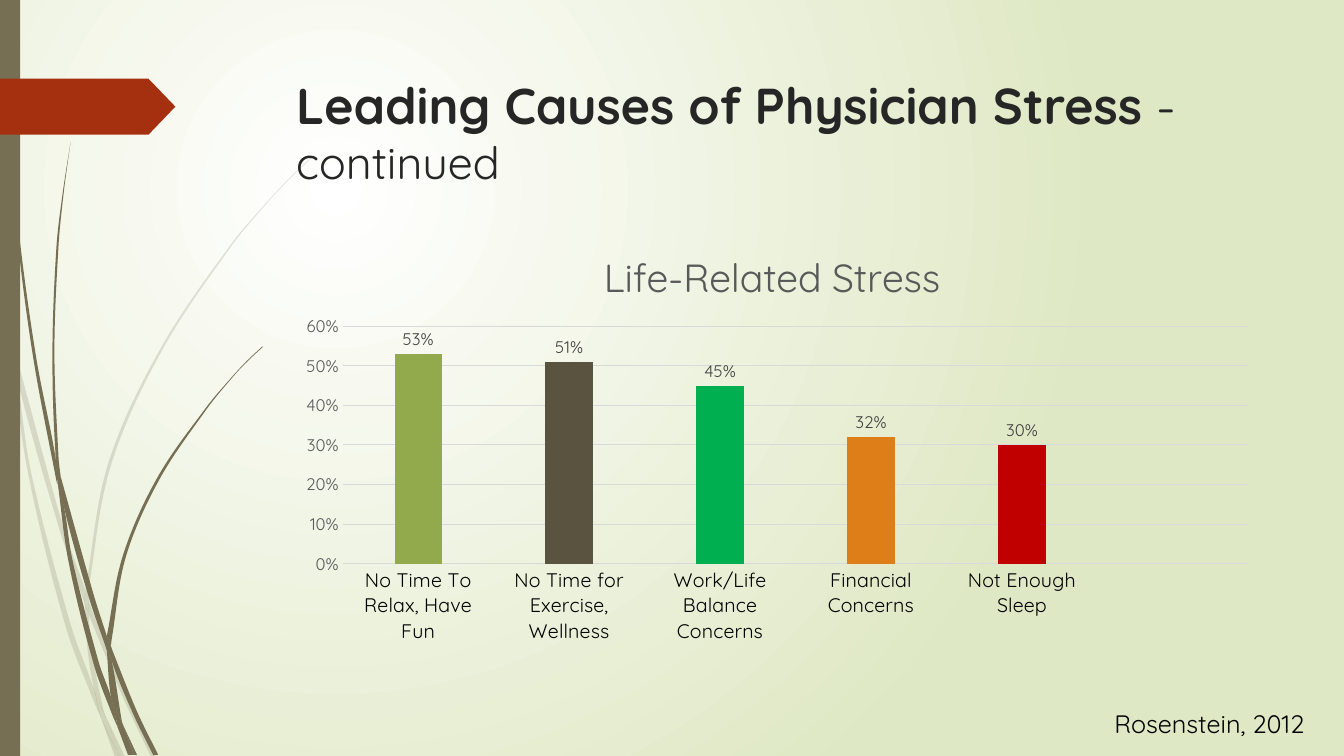
"""Build a slide with a column chart of life-related causes of physician stress."""
import math

import pptx
import pptx.chart.data
import pptx.dml.color
import pptx.enum.chart
import pptx.enum.shapes
import pptx.enum.text
import pptx.oxml.ns
import pptx.util
from lxml import etree

Pt = pptx.util.Pt
RGBColor = pptx.dml.color.RGBColor
qn = pptx.oxml.ns.qn

FONT = "Quicksand"
WHITE = RGBColor(0xFF, 0xFF, 0xFF)
PALE_GREEN = RGBColor(0xDF, 0xE8, 0xC4)
OLIVE = RGBColor(0x76, 0x6F, 0x54)
RUST = RGBColor(0xA5, 0x30, 0x10)
INK = RGBColor(0x26, 0x26, 0x26)
BLACK = RGBColor(0, 0, 0)
LABEL_GRAY = RGBColor(0x40, 0x40, 0x40)
AXIS_GRAY = RGBColor(0x59, 0x59, 0x59)
GRID_GRAY = RGBColor(0xD9, 0xD9, 0xD9)

CAUSES = [
    ("No Time To Relax, Have Fun", 0.53, RGBColor(0x92, 0xAA, 0x4C)),
    ("No Time for Exercise, Wellness", 0.51, RGBColor(0x59, 0x53, 0x3F)),
    ("Work/Life Balance Concerns", 0.45, RGBColor(0x00, 0xB0, 0x50)),
    ("Financial Concerns", 0.32, RGBColor(0xDE, 0x7E, 0x18)),
    ("Not Enough Sleep", 0.3, RGBColor(0xC0, 0x00, 0x00)),
]

GRASS_UNIT = 0.72
PALE_BLADES = [
    ([(0, 282), (9, 322), (11, 350)], [(11, 350), (10, 344), (0, 299)]),
    ([(14, 345), (62, 520), (85, 586)], [(84, 599), (58, 522), (17, 376), (14, 345)]),
    ([(88, 596), (92, 607), (127, 692), (155, 751)], [(150, 751), (123, 694), (88, 610)]),
    ([(105, 711), (124, 751)], [(119, 751), (105, 711)]),
    ([(11, 350), (17, 376), (31, 469), (70, 619), (93, 683), (99, 707), (101, 714)],
     [(101, 714), (92, 693), (65, 621), (28, 470), (11, 350)]),
    ([(84, 599), (88, 608), (88, 610), (91, 646), (103, 706), (105, 711)],
     [(105, 711), (96, 692), (93, 683), (87, 646), (84, 599)]),
    ([(312, 154), (290, 175), (268, 198), (229, 245), (160, 349), (110, 462), (88, 584),
      (88, 596)], [(85, 586), (85, 584), (107, 461), (158, 348), (228, 244), (268, 197),
                   (289, 175), (312, 153)]),
    ([(101, 714), (119, 751)], [(114, 751), (101, 714)]),
    ([(85, 586), (88, 596), (88, 610)], [(88, 608), (84, 599), (85, 586)]),
    ([(93, 683), (96, 692), (105, 711), (119, 751)], [(119, 751), (101, 714), (93, 683)]),
]
DARK_BLADES = [
    ([(4, 0), (4, 48), (8, 109), (19, 232), (36, 355), (55, 453), (57, 481)],
     [(57, 481), (56, 477), (33, 355), (17, 233), (7, 110), (4, 48), (3, 0)]),
    ([(60, 472), (93, 590), (106, 631)], [(106, 645), (88, 592), (64, 505), (60, 472)]),
    ([(110, 641), (113, 649), (136, 706), (157, 749)],
     [(152, 749), (132, 708), (111, 656), (110, 641)]),
    ([(57, 477), (64, 505), (72, 556), (98, 657), (110, 691), (116, 717), (117, 722)],
     [(117, 722), (111, 708), (93, 659), (68, 557), (57, 477)]),
    ([(70, 141), (63, 193), (58, 245), (54, 349), (58, 453), (60, 472)],
     [(60, 472), (55, 449), (52, 349), (56, 245), (62, 193), (70, 141)]),
    ([(122, 719), (136, 749)], [(133, 749), (122, 719)]),
    ([(55, 449), (60, 472), (64, 505)], [(64, 505), (57, 477), (55, 449)]),
    ([(261, 344), (245, 359), (231, 374), (205, 406), (158, 476), (125, 552), (111, 633),
      (110, 641)], [(106, 631), (122, 551), (156, 474), (204, 405), (231, 373), (245, 358),
                    (260, 344)]),
    ([(117, 722), (131, 749)], [(127, 749), (117, 722)]),
    ([(106, 645), (111, 656), (121, 716), (122, 719)],
     [(122, 719), (116, 706), (110, 691), (106, 645)]),
    ([(106, 631), (110, 641), (111, 656)], [(109, 651), (106, 645), (106, 631)]),
    ([(110, 691), (116, 706), (122, 719), (133, 749)],
     [(130, 749), (117, 722), (116, 717), (110, 691)]),
]


def style_font(font, size, color, bold=False):
    """Set the common typeface with a size, colour and weight."""
    font.name, font.size, font.bold = FONT, Pt(size), bold
    font.color.rgb = color


def paint(shape, color):
    """Give a shape a plain fill without line or shadow."""
    shape.shadow.inherit = False
    shape.fill.solid()
    shape.fill.fore_color.rgb = color
    shape.line.fill.background()


def paint_background(slide):
    """Fill the background with a round gradient from white to pale green."""
    fill = slide.background.fill
    fill.gradient()
    for stop, color in zip(fill.gradient_stops, (WHITE, PALE_GREEN)):
        stop.color.rgb = color
    gradient = slide.element.find(".//" + qn("a:gradFill"))
    gradient.remove(gradient.find(qn("a:lin")))
    circle = etree.SubElement(gradient, qn("a:path"), path="circle")
    etree.SubElement(circle, qn("a:fillToRect"), l="50000", t="50000", r="100000", b="100000")


def curve_points(knots):
    """Return two handles and an end point for each smooth segment between knots."""
    around = [knots[0], *knots, knots[-1]]
    points = []
    for before, start, end, after in zip(around, around[1:], around[2:], around[3:]):
        reach = math.dist(start, end) / 3
        for anchor, first, last, sign in ((start, before, end, 1), (end, start, after, -1)):
            scale = sign * reach / math.dist(first, last)
            points.append(tuple(a + scale * (q - p) for a, p, q in zip(anchor, first, last)))
        points.append(end)
    return points


def add_blade(slide, left, top, edges, alpha):
    """Draw one piece of grass between its two edges."""
    down, back = edges
    points = [down[0]] + curve_points(down)
    if down[-1] != back[0]:
        points += curve_points([down[-1], back[0]])
    points += curve_points(back)
    outline = [(Pt(left + GRASS_UNIT * x), Pt(top + GRASS_UNIT * y)) for x, y in points]
    builder = slide.shapes.build_freeform(*outline[0])
    builder.add_line_segments(outline[1:], close=False)
    blade = builder.convert_to_shape()
    segments = list(blade.element.iter(qn("a:lnTo")))
    for index in range(0, len(segments), 3):
        curve = etree.Element(qn("a:cubicBezTo"))
        segments[index].addprevious(curve)
        for segment in segments[index:index + 3]:
            curve.append(segment[0])
            segment.getparent().remove(segment)
    etree.SubElement(curve.getparent(), qn("a:close"))
    paint(blade, OLIVE)
    if alpha < 100:
        color = blade.element.spPr.find(qn("a:solidFill"))[0]
        etree.SubElement(color, qn("a:alpha"), val=str(alpha * 1000))


def add_decoration(slide, left, top, height):
    """Draw the grass, the side bar and the arrow tag."""
    for blades, alpha in ((PALE_BLADES, 20), (DARK_BLADES, 100)):
        for edges in blades:
            add_blade(slide, left, top, edges, alpha)
    kinds = pptx.enum.shapes.MSO_SHAPE
    bar = slide.shapes.add_shape(kinds.RECTANGLE, Pt(left), Pt(top), Pt(14.4), Pt(height))
    paint(bar, OLIVE)
    tag = slide.shapes.add_shape(kinds.PENTAGON, Pt(left), Pt(top + 56.2), Pt(125.3), Pt(40))
    tag.adjustments[0] = 0.48
    paint(tag, RUST)


def add_text(slide, box, runs, color, alignment=None):
    """Add a wrapping text box with one paragraph of (text, size, bold) runs."""
    shape = slide.shapes.add_textbox(*map(Pt, box))
    shape.text_frame.word_wrap = True
    paragraph = shape.text_frame.paragraphs[0]
    paragraph.alignment = alignment
    for text, size, bold in runs:
        run = paragraph.add_run()
        run.text = text
        style_font(run.font, size, color, bold)


def set_layout(parent, index, **shares):
    """Place a chart part by shares of the chart's size."""
    for old in parent.findall(qn("c:layout")):
        parent.remove(old)
    layout = etree.Element(qn("c:layout"))
    manual = etree.SubElement(layout, qn("c:manualLayout"))
    if "w" in shares:
        etree.SubElement(manual, qn("c:layoutTarget"), val="inner")
    for name in ("xMode", "yMode"):
        etree.SubElement(manual, qn("c:" + name), val="edge")
    for name, share in shares.items():
        etree.SubElement(manual, qn("c:" + name), val=str(share))
    parent.insert(index, layout)


def add_stress_chart(slide, left, top, width, height):
    """Add the column chart of life-related stress."""
    kinds = pptx.enum.chart
    data = pptx.chart.data.CategoryChartData(number_format="0%")
    data.categories = [cause for cause, share, color in CAUSES] + [""]
    data.add_series("Series 1", [share for cause, share, color in CAUSES] + [None])
    chart = slide.shapes.add_chart(kinds.XL_CHART_TYPE.COLUMN_CLUSTERED, Pt(left), Pt(top),
                                   Pt(width), Pt(height), data).chart
    style_font(chart.font, 10, BLACK)
    chart.has_legend = False
    title = chart.chart_title.text_frame.paragraphs[0]
    title.text = "Life-Related Stress"
    style_font(title.font, 28, AXIS_GRAY)
    set_layout(chart.chart_title._element, 1, x=222.5 / width, y=4.9 / height)
    set_layout(chart._chartSpace.chart.plotArea, 0, x=41 / width, y=65.2 / height,
               w=647 / width, h=169.7 / height)

    for axis, size, color in ((chart.category_axis, 14, BLACK),
                              (chart.value_axis, 12, AXIS_GRAY)):
        axis.major_tick_mark = axis.minor_tick_mark = kinds.XL_TICK_MARK.NONE
        style_font(axis.tick_labels.font, size, color)
    shares = chart.value_axis
    shares.minimum_scale, shares.maximum_scale, shares.major_unit = 0, 0.6, 0.1
    shares.tick_labels.number_format = "0%"
    shares.tick_labels.number_format_is_linked = False
    shares.format.line.fill.background()
    for line in (chart.category_axis.format.line, shares.major_gridlines.format.line):
        line.color.rgb, line.width = GRID_GRAY, Pt(0.75)

    plot = chart.plots[0]
    plot.gap_width, plot.overlap, plot.vary_by_categories = 219, -27, False
    series = plot.series[0]
    paint_targets = [(series, RUST)]
    paint_targets += [(series.points[i], cause[2]) for i, cause in enumerate(CAUSES)]
    for target, color in paint_targets:
        target.format.fill.solid()
        target.format.fill.fore_color.rgb = color
    labels = series.data_labels
    labels.show_value = True
    labels.number_format, labels.number_format_is_linked = "0%", False
    labels.position = kinds.XL_LABEL_POSITION.OUTSIDE_END
    style_font(labels.font, 12, LABEL_GRAY)


def main():
    """Build and save the presentation."""
    presentation = pptx.Presentation()
    presentation.slide_width, presentation.slide_height = Pt(960), Pt(540)
    slide = presentation.slides.add_slide(presentation.slide_layouts[6])
    paint_background(slide)
    add_decoration(slide, 0, 0, 540)
    add_text(slide, (204.5, 49.6, 702, 101),
             [("Leading Causes of Physician Stress ", 36, True), ("- ", 36, False),
              ("continued", 32, False)], INK)
    add_stress_chart(slide, 203.8, 167.8, 702, 297.4)
    add_text(slide, (771.8, 502.6, 167, 29), [("Rosenstein, 2012", 18, False)], BLACK,
             pptx.enum.text.PP_ALIGN.RIGHT)
    presentation.save("out.pptx")


if __name__ == "__main__":
    main()
